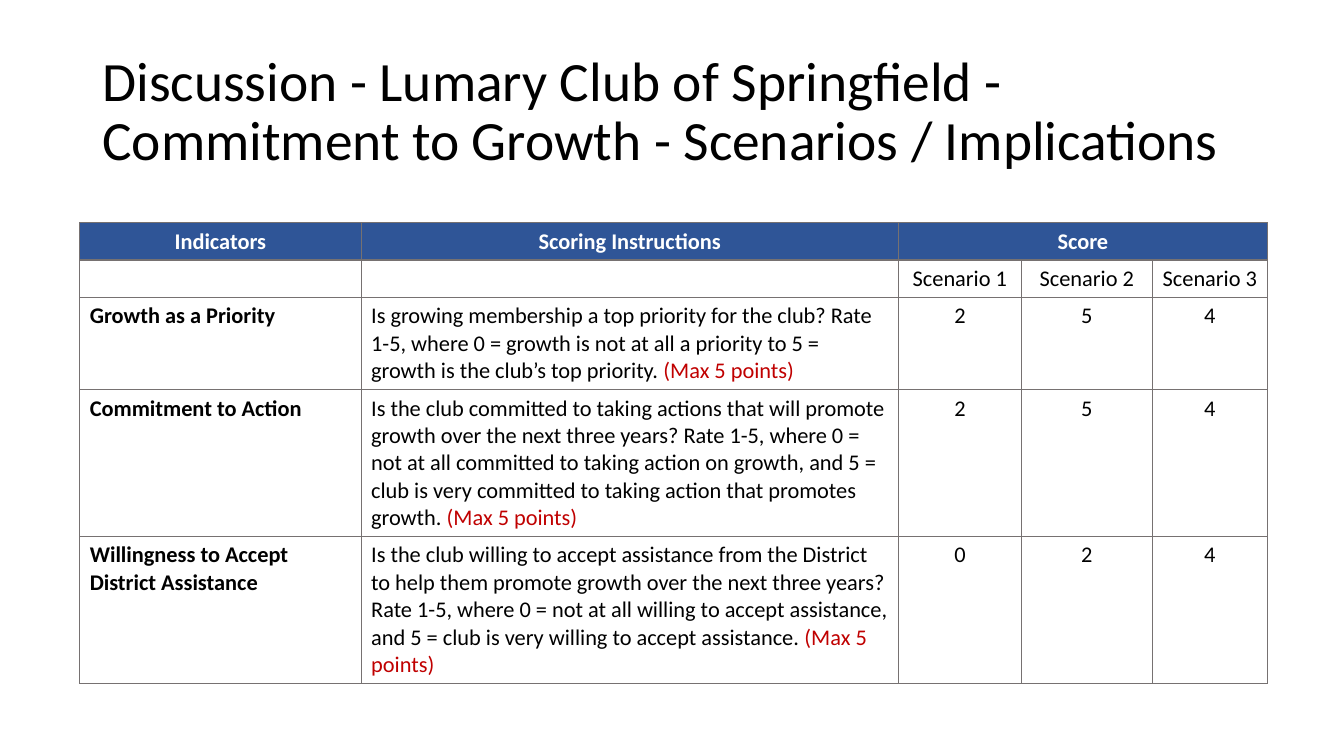
import pptx
import pptx.util
import pptx.dml.color
import pptx.enum.text
import pptx.oxml.ns
from lxml import etree

Cm, Pt = pptx.util.Cm, pptx.util.Pt
ALIGN = pptx.enum.text.PP_ALIGN
COLORS = {"text": "000000", "header": "2F5597", "header_text": "FFFFFF",
          "points": "C00000", "border": "767171"}
FONT = "Calibri"
CELL_SIZE = 16

TITLE = ("Discussion - Lumary Club of Springfield - "
         "Commitment to Growth - Scenarios / Implications")
HEADINGS = ["Indicators", "Scoring Instructions", "Score"]
SCENARIOS = ["Scenario 1", "Scenario 2", "Scenario 3"]
MAX_POINTS = "(Max 5 points)"
INDICATORS = [
    ("Growth as a Priority",
     "Is growing membership a top priority for the club? Rate 1-5, where "
     "0 = growth is not at all a priority to 5 = growth is the club’s top priority. ",
     [2, 5, 4]),
    ("Commitment to Action",
     "Is the club committed to taking actions that will promote growth over the "
     "next three years? Rate 1-5, where 0 = not at all committed to taking action "
     "on growth, and 5 = club is very committed to taking action that promotes growth. ",
     [2, 5, 4]),
    ("Willingness to Accept District Assistance",
     "Is the club willing to accept assistance from the District to help them "
     "promote growth over the next three years? Rate 1-5, where 0 = not at all "
     "willing to accept assistance, and 5 = club is very willing to accept assistance. ",
     [0, 2, 4]),
]
COLUMN_WIDTHS = [7.09, 13.54, 3.1, 3.3, 2.9]
ROW_HEIGHTS = [0.94, 0.94, 2.33, 3.7, 3.7]


def rgb(name):
    return pptx.dml.color.RGBColor.from_string(COLORS[name])


def add_span(para, text, size, color="text", bold=False):
    span = para.add_run()
    span.text = text
    for key, value in {"name": FONT, "size": Pt(size), "bold": bold}.items():
        setattr(span.font, key, value)
    span.font.color.rgb = rgb(color)


def add_title(page, left, top, width, height):
    box = page.shapes.add_textbox(Cm(left), Cm(top), Cm(width), Cm(height))
    frame = box.text_frame
    frame.word_wrap = True
    frame.vertical_anchor = pptx.enum.text.MSO_ANCHOR.MIDDLE
    para = frame.paragraphs[0]
    para.line_spacing = 0.9
    add_span(para, TITLE, 39.6)


def style_cell(cell, fill=None):
    """Draw the grid lines, then the fill, and size the empty text line."""
    qn = pptx.oxml.ns.qn
    properties = cell._tc.get_or_add_tcPr()
    for side in ("lnL", "lnR", "lnT", "lnB"):
        line = etree.SubElement(properties, qn(f"a:{side}"), w=str(Pt(1)))
        solid = etree.SubElement(line, qn("a:solidFill"))
        etree.SubElement(solid, qn("a:srgbClr"), val=COLORS["border"])
    if fill:
        cell.fill.solid()
        cell.fill.fore_color.rgb = rgb(fill)
    else:
        cell.fill.background()
    para = cell.text_frame.paragraphs[0]
    etree.SubElement(para._p, qn("a:endParaRPr"), sz=str(CELL_SIZE * 100))


def write_cell(cell, text, align=ALIGN.CENTER, **formats):
    para = cell.text_frame.paragraphs[0]
    para.alignment = align
    add_span(para, text, CELL_SIZE, **formats)
    return para


def add_score_table(page, left, top, widths, heights):
    table = page.shapes.add_table(
        len(heights), len(widths), Cm(left), Cm(top),
        Cm(sum(widths)), Cm(sum(heights))).table
    for column, width in zip(table.columns, widths):
        column.width = Cm(width)
    for index, height in enumerate(heights):
        row = table.rows[index]
        row.height = Cm(height)
        for cell in row.cells:
            style_cell(cell, "header" if index == 0 else None)

    # Header rows
    table.cell(0, 2).merge(table.cell(0, 4))
    for column, heading in enumerate(HEADINGS):
        write_cell(table.cell(0, column), heading, color="header_text", bold=True)
    for column, scenario in enumerate(SCENARIOS, 2):
        write_cell(table.cell(1, column), scenario)

    # Indicator rows
    for row, (indicator, instructions, scores) in enumerate(INDICATORS, 2):
        write_cell(table.cell(row, 0), indicator, ALIGN.LEFT, bold=True)
        para = write_cell(table.cell(row, 1), instructions, ALIGN.LEFT)
        add_span(para, MAX_POINTS, CELL_SIZE, "points")
        for column, score in enumerate(scores, 2):
            write_cell(table.cell(row, column), str(score))


def main():
    deck = pptx.Presentation()
    deck.slide_width, deck.slide_height = Cm(33.87), Cm(19.05)
    page = deck.slides.add_slide(deck.slide_layouts[6])
    add_title(page, 2.33, 1.01, 29.21, 3.68)
    add_score_table(page, 2.01, 5.61, COLUMN_WIDTHS, ROW_HEIGHTS)
    deck.save("out.pptx")


if __name__ == "__main__":
    main()
